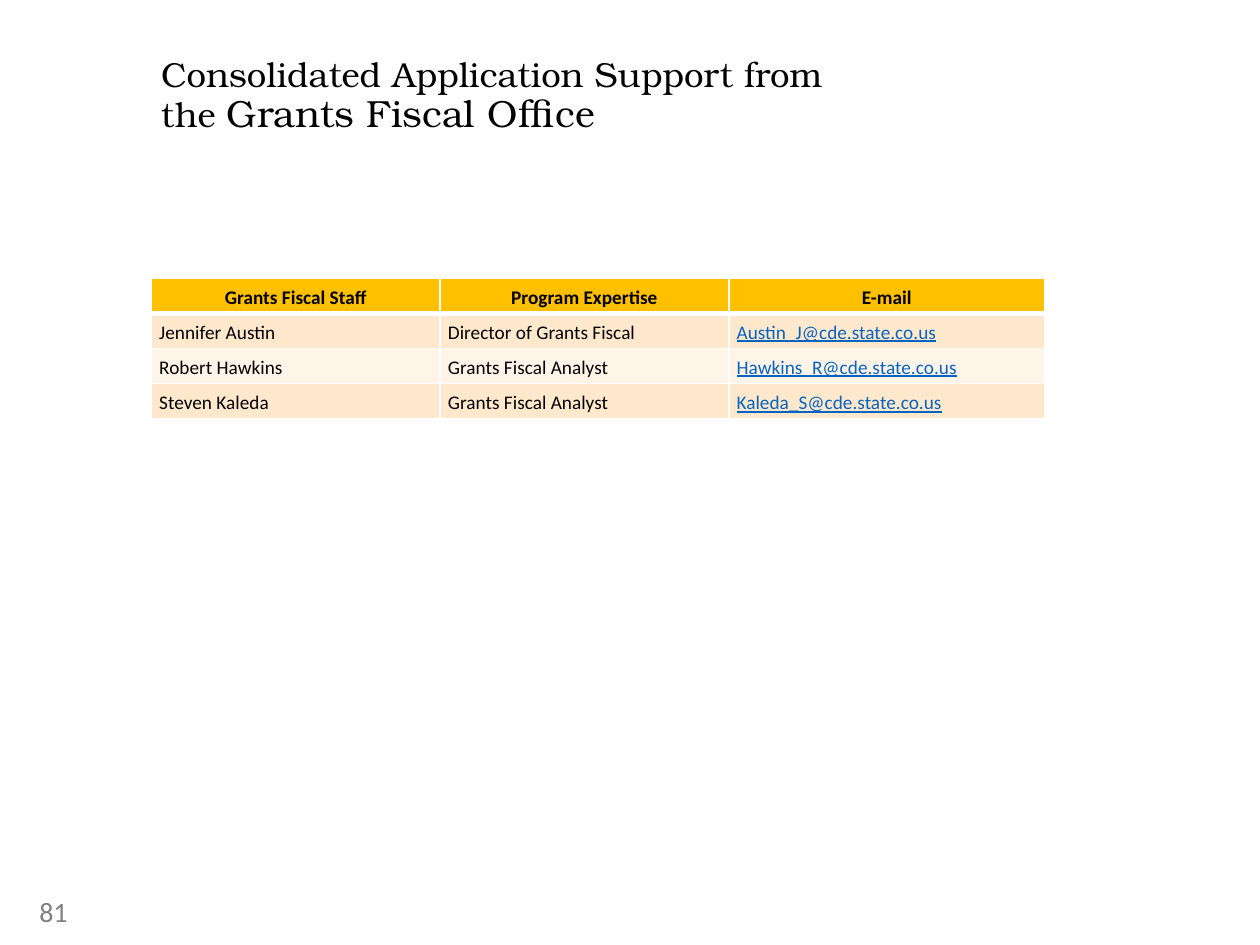
from dataclasses import dataclass

from lxml.etree import SubElement
from pptx import Presentation
from pptx.dml.color import RGBColor
from pptx.enum.text import MSO_ANCHOR, PP_ALIGN
from pptx.oxml.ns import qn
from pptx.util import Pt


@dataclass(frozen=True)
class Theme:
    heading_font: str = "TeX Gyre Bonum"
    body_font: str = "Calibri"
    ink: str = "000000"
    muted: str = "808080"
    link: str = "0563C1"
    header_fill: str = "FFC000"
    band_fills: tuple = ("FFE8CC", "FFF4E7")
    rule: str = "FFFFFF"
    title_size: float = 19.8
    title_emphasis_size: float = 21.6
    table_size: float = 11
    number_size: float = 16


class SlideBuilder:
    def __init__(self, slide, theme):
        self.slide = slide
        self.theme = theme

    def style(self, font, size, color, name=None):
        font.name = name or self.theme.body_font
        font.size = Pt(size)
        font.color.rgb = RGBColor.from_string(color)

    def set_margins(self, target, horizontal, vertical):
        target.margin_left = target.margin_right = Pt(horizontal)
        target.margin_top = target.margin_bottom = Pt(vertical)

    def place(self, shape, left, top, width, height):
        shape.left, shape.top = Pt(left), Pt(top)
        shape.width, shape.height = Pt(width), Pt(height)

    def title(self, parts, *box):
        heading = self.slide.shapes.title
        self.place(heading, *box)
        frame = heading.text_frame
        frame.word_wrap = True
        frame.vertical_anchor = MSO_ANCHOR.TOP
        self.set_margins(frame, 0, 0)
        line = frame.paragraphs[0]
        line.alignment = PP_ALIGN.LEFT
        line.line_spacing = 0.9
        for text, size in parts:
            run = line.add_run()
            run.text = text
            self.style(run.font, size, self.theme.ink, self.theme.heading_font)

    def page_number(self, number, *box):
        frame = self.slide.shapes.add_textbox(*map(Pt, box)).text_frame
        frame.word_wrap = True
        frame.vertical_anchor = MSO_ANCHOR.MIDDLE
        self.set_margins(frame, 5, 3)
        line = frame.paragraphs[0]
        line.text = number
        self.style(line.font, self.theme.number_size, self.theme.muted)

    def borders(self, cell, widths):
        properties = cell._tc.get_or_add_tcPr()
        for side, width in widths.items():
            edge = SubElement(properties, qn(f"a:ln{side}"), w=str(Pt(width)))
            fill = SubElement(edge, qn("a:solidFill"))
            SubElement(fill, qn("a:srgbClr"), val=self.theme.rule)

    def cell(self, cell, text, row):
        is_header = row == 0
        is_email = "@" in text
        # Heavier rule between the header and the first staff row
        self.borders(cell, {"L": 1, "R": 1, "T": 3 if row == 1 else 1,
                            "B": 3 if is_header else 1})
        bands = self.theme.band_fills
        fill = self.theme.header_fill if is_header else bands[(row - 1) % len(bands)]
        cell.fill.solid()
        cell.fill.fore_color.rgb = RGBColor.from_string(fill)
        self.set_margins(cell, 4.5, 2.25)
        line = cell.text_frame.paragraphs[0]
        line.text = text
        line.alignment = PP_ALIGN.CENTER if is_header else PP_ALIGN.LEFT
        line.line_spacing = 1.15
        self.style(line.font, self.theme.table_size,
                   self.theme.link if is_email else self.theme.ink)
        line.font.bold = is_header
        line.font.underline = is_email

    def table(self, rows, left, top, column_widths, row_height):
        table = self.slide.shapes.add_table(
            len(rows), len(column_widths), Pt(left), Pt(top),
            Pt(sum(column_widths)), Pt(row_height * len(rows))).table
        for column, width in zip(table.columns, column_widths):
            column.width = Pt(width)
        for row, texts in enumerate(rows):
            table.rows[row].height = Pt(row_height)
            for column, text in enumerate(texts):
                self.cell(table.cell(row, column), text, row)


STAFF = [
    ("Grants Fiscal Staff", "Program Expertise", "E-mail"),
    ("Jennifer Austin", "Director of Grants Fiscal", "Austin_J@cde.state.co.us"),
    ("Robert Hawkins", "Grants Fiscal Analyst", "Hawkins_R@cde.state.co.us"),
    ("Steven Kaleda", "Grants Fiscal Analyst", "Kaleda_S@cde.state.co.us"),
]


def main():
    deck = Presentation()
    deck.slide_width, deck.slide_height = Pt(720), Pt(540)
    theme = Theme()
    title_only = deck.slide_layouts[5]
    builder = SlideBuilder(deck.slides.add_slide(title_only), theme)

    # Heading
    builder.title([("Consolidated Application Support from the ", theme.title_size),
                   ("Grants Fiscal Office", theme.title_emphasis_size)],
                  92, 33, 406, 47)
    # Staff contacts
    builder.table(STAFF, 86.5, 159, (165, 165, 180.5), 19.5)
    # Footer
    builder.page_number("81", 17.5, 506, 162, 29)

    deck.save("out.pptx")


if __name__ == "__main__":
    main()
